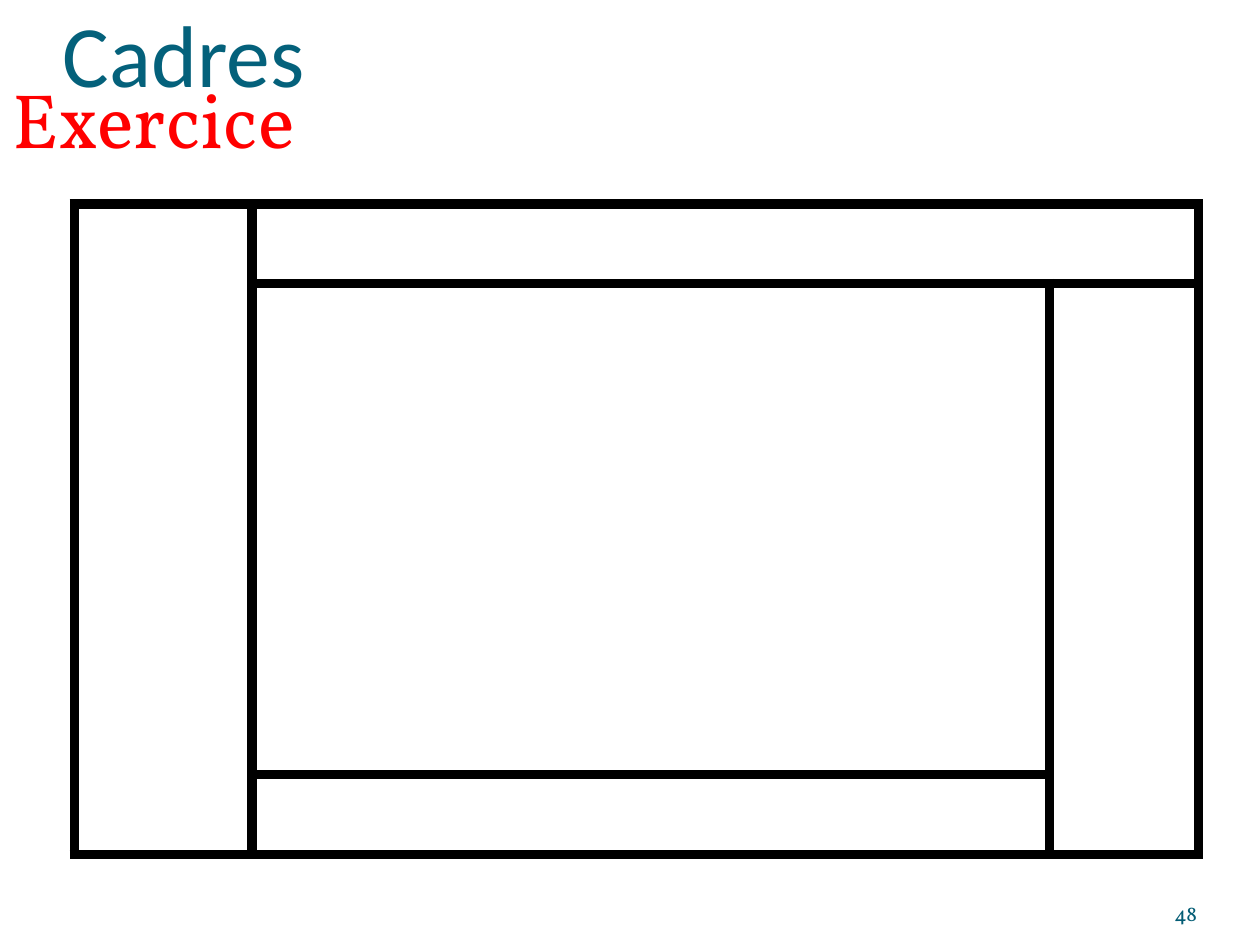
from lxml.etree import SubElement
from pptx import Presentation
from pptx.dml.color import RGBColor
from pptx.enum.text import MSO_ANCHOR, PP_ALIGN
from pptx.oxml.ns import qn
from pptx.util import Pt

THEME = {
    "title": ("Calibri", 50, "04617B"),
    "exercise": ("Vollkorn", 44, "FF0000"),
    "number": ("Vollkorn", 12, "045D75"),
    "border": ("000000", 6),
}


def add_text(s, text, style, box, insets, anchor, align=PP_ALIGN.LEFT):
    font, size, color = THEME[style]
    tf = s.shapes.add_textbox(*map(Pt, box)).text_frame
    tf.word_wrap = True
    tf.vertical_anchor = anchor
    tf.margin_left, tf.margin_top, tf.margin_right, tf.margin_bottom = map(Pt, insets)
    tf.text = text
    p = tf.paragraphs[0]
    p.alignment = align
    r = p.runs[0]
    r.font.name = font
    r.font.size = Pt(size)
    r.font.color.rgb = RGBColor.from_string(color)


def add_borders(cell):
    color, width = THEME["border"]
    tc_pr = cell._tc.get_or_add_tcPr()
    for side in ("a:lnL", "a:lnR", "a:lnT", "a:lnB"):
        ln = SubElement(tc_pr, qn(side), w=str(Pt(width)))
        fill = SubElement(ln, qn("a:solidFill"))
        SubElement(fill, qn("a:srgbClr"), val=color)


prs = Presentation()
prs.slide_width, prs.slide_height = Pt(720), Pt(540)
s = prs.slides.add_slide(prs.slide_layouts[6])

add_text(s, "Cadres", "title", (36, -30.24, 648, 90), (0, 3.6, 0, 0), MSO_ANCHOR.BOTTOM)

cols = (101.5, 455.8, 85)
rows = (45.4, 280.8, 45.4)
frame = s.shapes.add_table(
    len(rows), len(cols), Pt(42.5), Pt(116.6), Pt(sum(cols)), Pt(sum(rows))
)
table = frame.table
table.first_row = table.horz_banding = False
for col, width in zip(table.columns, cols):
    col.width = Pt(width)
for row, height in zip(table.rows, rows):
    row.height = Pt(height)
for cell in table.iter_cells():
    add_borders(cell)
    cell.fill.background()
for first, last in (((0, 0), (2, 0)), ((0, 1), (0, 2)), ((1, 2), (2, 2))):
    table.cell(*first).merge(table.cell(*last))

add_text(s, "48", "number", (624, 500.4, 60, 28.8), (0, 0, 0, 0),
         MSO_ANCHOR.BOTTOM, PP_ALIGN.RIGHT)
add_text(s, "Exercice", "exercise", (0, 37.44, 720, 60.5), (7.2, 3.6, 7.2, 3.6),
         MSO_ANCHOR.TOP)

prs.save("out.pptx")
